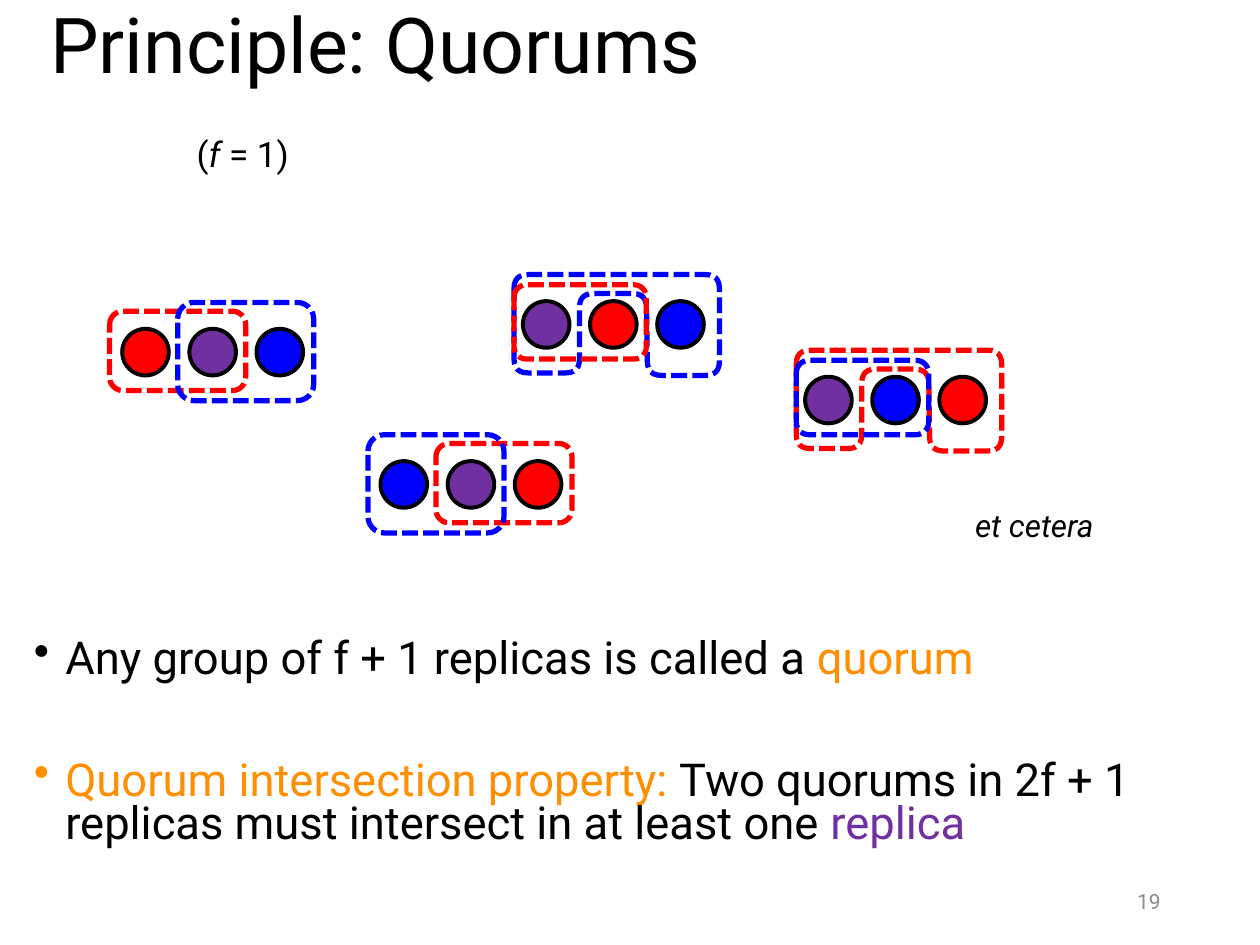
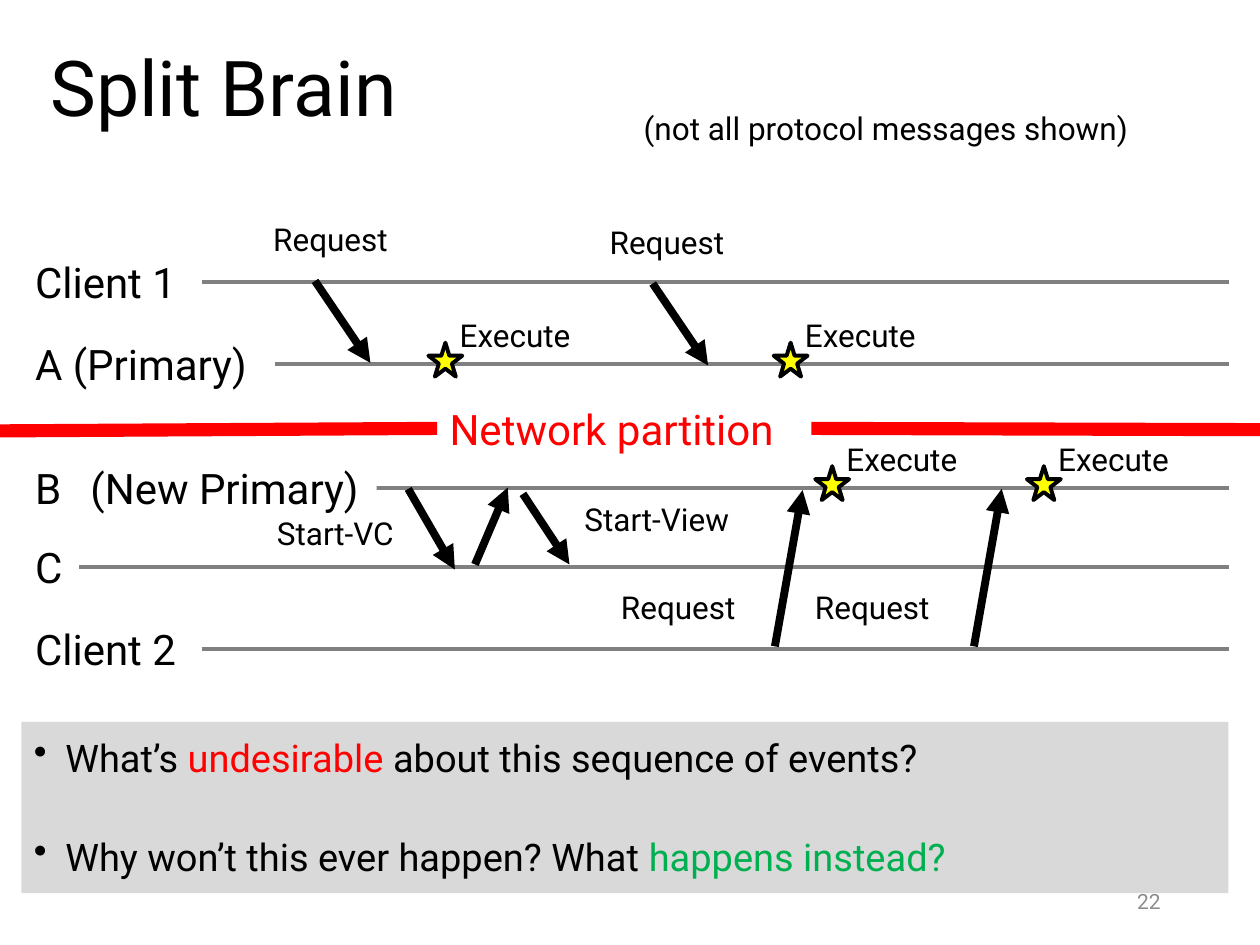
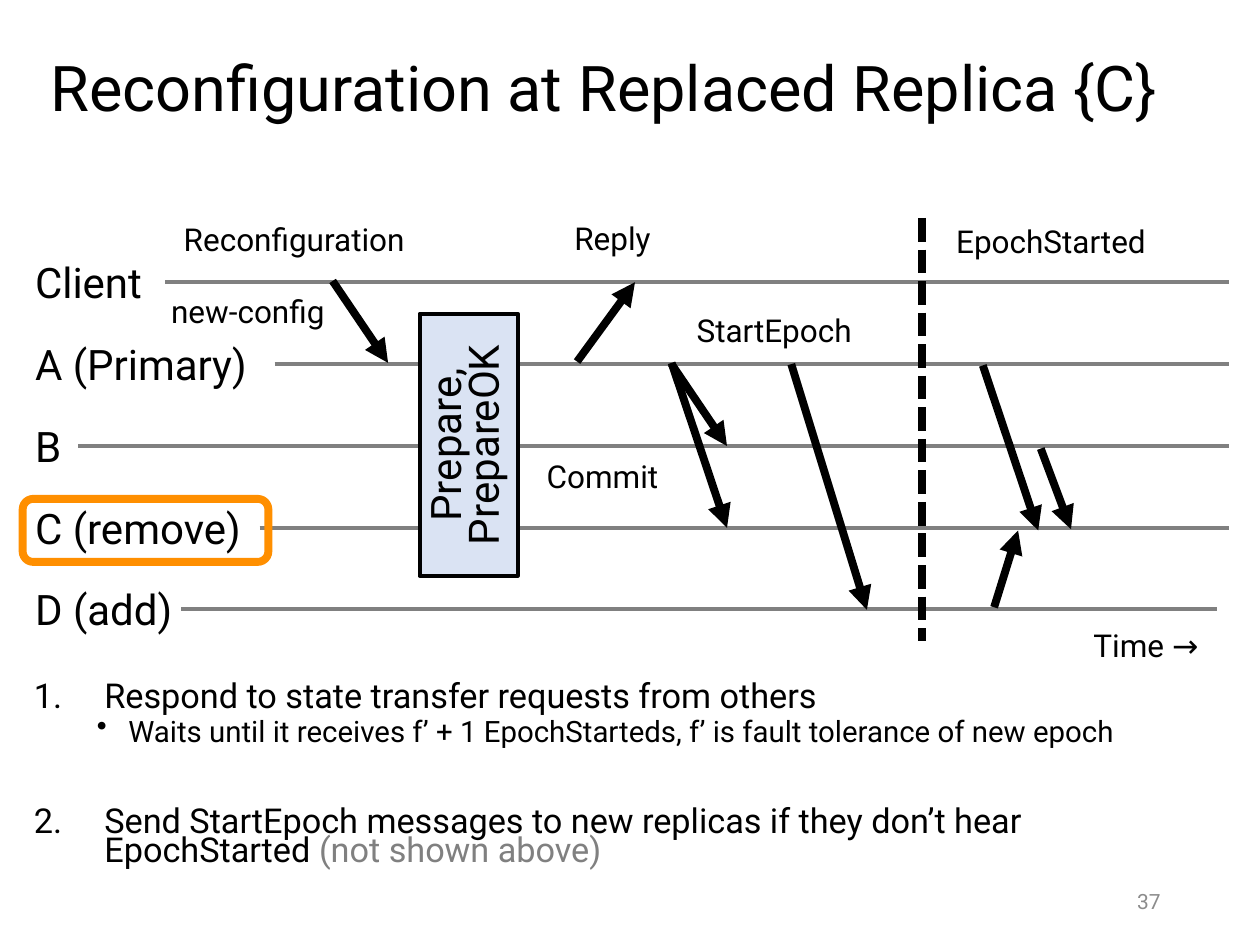
from dataclasses import dataclass
from math import hypot
from typing import Optional

from lxml.etree import SubElement
from pptx import Presentation
from pptx.dml.color import RGBColor
from pptx.enum.dml import MSO_LINE
from pptx.enum.shapes import MSO_CONNECTOR, MSO_SHAPE
from pptx.enum.text import MSO_ANCHOR, MSO_AUTO_SIZE, PP_ALIGN
from pptx.oxml.ns import qn
from pptx.shapes.autoshape import Shape
from pptx.shapes.connector import Connector
from pptx.slide import Slide
from pptx.util import Inches, Pt

WIDTH, HEIGHT = Inches(10), Inches(7.5)
COLUMNS, ROWS = 100, 75
FONT = "Roboto"
BLACK = RGBColor(0x00, 0x00, 0x00)
WHITE = RGBColor(0xFF, 0xFF, 0xFF)
RED = RGBColor(0xFF, 0x00, 0x00)
BLUE = RGBColor(0x00, 0x00, 0xFF)
PURPLE = RGBColor(0x70, 0x30, 0xA0)
ORANGE = RGBColor(0xFF, 0x8F, 0x00)
GREEN = RGBColor(0x00, 0xB0, 0x50)
YELLOW = RGBColor(0xFF, 0xFF, 0x00)
GREY = RGBColor(0x80, 0x80, 0x80)
NUMBER_GREY = RGBColor(0x8C, 0x8C, 0x8C)
PANEL_GREY = RGBColor(0xD9, 0xD9, 0xD9)
PALE_BLUE = RGBColor(0xDA, 0xE3, 0xF3)
LIFELINE_END = 97.5


@dataclass(frozen=True)
class Span:
    text: str
    color: RGBColor = BLACK


@dataclass(frozen=True)
class Point:
    spans: tuple[Span, ...]
    size: float
    before: float = 10
    margin: float = 0.25
    hang: float = 0.25
    numbered: bool = False


@dataclass(frozen=True)
class Label:
    text: str
    left: float
    top: float
    width: float


@dataclass(frozen=True)
class Lifeline:
    name: str
    row: float
    label_width: float
    gap: float = 0
    end: float = LIFELINE_END


@dataclass(frozen=True)
class Arrow:
    left: float
    top: float
    right: float
    bottom: float


@dataclass(frozen=True)
class Cluster:
    left: float
    top: float
    colors: tuple[RGBColor, RGBColor, RGBColor]


def across(columns: float) -> int:
    return round(WIDTH * columns / COLUMNS)


def down(rows: float) -> int:
    return round(HEIGHT * rows / ROWS)


def area(left: float, top: float, width: float, height: float) -> tuple[int, int, int, int]:
    return across(left), down(top), across(width), down(height)


def add_span(para, text: str, *, size: float, color: RGBColor = BLACK,
             italic: Optional[bool] = None) -> None:
    span = para.add_run()
    span.text = text
    span.font.name = FONT
    span.font.size = Pt(size)
    span.font.color.rgb = color
    span.font.italic = italic


def add_label(page: Slide, label: Label, *, size: float = 18, height: float = 4,
              color: RGBColor = BLACK, italic: Optional[bool] = None) -> Shape:
    box = page.shapes.add_textbox(*area(label.left, label.top, label.width, height))
    box.text_frame.word_wrap = False
    box.text_frame.auto_size = MSO_AUTO_SIZE.SHAPE_TO_FIT_TEXT
    add_span(box.text_frame.paragraphs[0], label.text, size=size, color=color, italic=italic)
    return box


def format_shape(shape: Shape, fill: Optional[RGBColor], line: Optional[RGBColor],
                 weight: float = 2.25, dashed: bool = False) -> None:
    shape.shadow.inherit = False
    if fill is None:
        shape.fill.background()
    else:
        shape.fill.solid()
        shape.fill.fore_color.rgb = fill
    if line is None:
        shape.line.fill.background()
        return
    shape.line.color.rgb = line
    shape.line.width = Pt(weight)
    if dashed:
        shape.line.dash_style = MSO_LINE.SQUARE_DOT


def add_outline(page: Slide, kind: MSO_SHAPE, left: float, top: float, width: float,
                height: float, *, fill: Optional[RGBColor] = None,
                line: Optional[RGBColor] = BLACK, weight: float = 2.25,
                dashed: bool = False) -> Shape:
    shape = page.shapes.add_shape(kind, *area(left, top, width, height))
    format_shape(shape, fill, line, weight, dashed)
    return shape


def add_line(page: Slide, left: float, top: float, right: float, bottom: float, *,
             color: RGBColor = BLACK, weight: float = 4.5, dashed: bool = False,
             arrow: bool = False) -> Connector:
    line = page.shapes.add_connector(MSO_CONNECTOR.STRAIGHT, across(left), down(top),
                                     across(right), down(bottom))
    line.line.color.rgb = color
    line.line.width = Pt(weight)
    if dashed:
        line.line.dash_style = MSO_LINE.SQUARE_DOT
    if arrow:
        SubElement(line.line._get_or_add_ln(), qn("a:tailEnd"), type="triangle")
    SubElement(line._element.spPr, qn("a:effectLst"))
    return line


def add_arrows(page: Slide, arrows: list[Arrow]) -> None:
    for arrow in arrows:
        add_line(page, arrow.left, arrow.top, arrow.right, arrow.bottom, arrow=True)


def add_lifelines(page: Slide, lifelines: list[Lifeline]) -> None:
    left = 1.8
    for lifeline in lifelines:
        box = add_label(page, Label(lifeline.name, left, lifeline.row - 2.5,
                                    lifeline.label_width), size=24, height=5)
        start = left + lifeline.label_width + lifeline.gap
        line = add_line(page, start, lifeline.row, lifeline.end, lifeline.row,
                        color=GREY, weight=2.25)
        if lifeline.gap == 0:
            line.begin_connect(box, 3)


def add_page(deck, title: str, number: int, *, size: float = 44, width: float = 94) -> Slide:
    page = deck.slides.add_slide(deck.slide_layouts[5])
    box = page.shapes.title
    box.left, box.top, box.width, box.height = area(3, 0, width, 14.5)
    frame = box.text_frame
    frame.word_wrap = True
    frame.auto_size = MSO_AUTO_SIZE.NONE
    frame.vertical_anchor = MSO_ANCHOR.MIDDLE
    para = frame.paragraphs[0]
    para.alignment = PP_ALIGN.LEFT
    para.line_spacing = 0.9
    add_span(para, title, size=size)

    box = page.shapes.add_textbox(*area(70.6, 69.5, 22.5, 4))
    box.text_frame.word_wrap = True
    box.text_frame.vertical_anchor = MSO_ANCHOR.MIDDLE
    para = box.text_frame.paragraphs[0]
    para.alignment = PP_ALIGN.RIGHT
    add_span(para, str(number), size=12, color=NUMBER_GREY)
    return page


def add_points(page: Slide, points: list[Point], *, top: float, height: float,
               spacing: float, fill: Optional[RGBColor] = None) -> Shape:
    box = page.shapes.add_textbox(*area(1.7, top, 95.8, height))
    if fill is not None:
        box.fill.solid()
        box.fill.fore_color.rgb = fill
    frame = box.text_frame
    frame.word_wrap = True
    for index, point in enumerate(points):
        para = frame.add_paragraph() if index else frame.paragraphs[0]
        para.line_spacing = spacing
        para.space_before = Pt(point.before)
        properties = para._p.get_or_add_pPr()
        properties.set("marL", str(Inches(point.margin)))
        properties.set("indent", str(-Inches(point.hang)))
        if point.numbered:
            SubElement(properties, qn("a:buAutoNum"), type="arabicPeriod")
        else:
            SubElement(properties, qn("a:buChar"), char="•")
        for span in point.spans:
            add_span(para, span.text, size=point.size, color=span.color)
    return box


def rounded(corners: list[tuple[float, float]], radius: float) -> list[tuple[float, float]]:
    steps = 6
    outline = []
    for index, (x, y) in enumerate(corners):
        ends = []
        for near_x, near_y in (corners[index - 1], corners[(index + 1) % len(corners)]):
            share = radius / hypot(near_x - x, near_y - y)
            ends.append((x + (near_x - x) * share, y + (near_y - y) * share))
        (start_x, start_y), (end_x, end_y) = ends
        for step in range(steps + 1):
            t = step / steps
            a, b, c = (1 - t) ** 2, 2 * t * (1 - t), t ** 2
            outline.append((a * start_x + b * x + c * end_x, a * start_y + b * y + c * end_y))
    return outline


def add_replicas(page: Slide, cluster: Cluster) -> None:
    for index, color in enumerate(cluster.colors):
        add_outline(page, MSO_SHAPE.OVAL, cluster.left + 5.33 * index, cluster.top,
                    3.7, 3.7, fill=color)


def add_quorum(page: Slide, left: float, top: float, width: float, height: float,
               color: RGBColor) -> None:
    add_outline(page, MSO_SHAPE.ROUNDED_RECTANGLE, left, top, width, height,
                line=color, weight=3, dashed=True)


def add_adjacent_quorums(page: Slide, cluster: Cluster) -> None:
    add_replicas(page, cluster)
    for color, rise, height in ((RED, 1.4, 6.3), (BLUE, 2.1, 7.8)):
        shift = -1 if cluster.colors[0] == color else 4.4
        add_quorum(page, cluster.left + shift, cluster.top - rise, 10.8, height, color)


def add_notched_quorums(page: Slide, cluster: Cluster) -> None:
    add_replicas(page, cluster)
    inner, outer = cluster.colors[1:]
    corners = [(-0.7, -2.1), (15.6, -2.1), (15.6, 5.9), (9.9, 5.9),
               (9.8, -0.6), (4.5, -0.6), (4.5, 5.7), (-0.7, 5.7)]
    outline = [(across(cluster.left + x), down(cluster.top + y))
               for x, y in rounded(corners, 1.1)]
    builder = page.shapes.build_freeform(*outline[0])
    builder.add_line_segments(outline[1:], close=True)
    format_shape(builder.convert_to_shape(), None, outer, 3, True)
    add_quorum(page, cluster.left - 0.7, cluster.top - 1.3, 10.5, 5.9, inner)


def add_execution(page: Slide, left: float, top: float) -> None:
    add_label(page, Label("Execute", left + 1.5, top - 2.6, 11.7))
    add_outline(page, MSO_SHAPE.STAR_5_POINT, left, top, 2.7, 2.7, fill=YELLOW)


def build_quorums(deck) -> None:
    page = add_page(deck, "Principle: Quorums", 19)
    para = page.shapes.title.text_frame.add_paragraph()
    para.alignment = PP_ALIGN.LEFT
    para.line_spacing = 0.9
    para.space_before = Pt(27)
    para._p.get_or_add_pPr().set("marL", str(across(11.6)))
    para._p.get_or_add_pPr().set("indent", "0")
    add_span(para, "(", size=20)
    add_span(para, "f", size=20, italic=True)
    add_span(para, " = 1)", size=20)
    add_points(page, [
        Point((Span("Any group of f + 1 replicas is called a "), Span("quorum", ORANGE)), 25.9),
        Point((Span("Quorum intersection property: ", ORANGE),
               Span("Two quorums in 2f + 1 replicas must intersect in at least one"),
               Span(" replica", PURPLE)), 25.9, before=44.5),
    ], top=50.3, height=18.9, spacing=0.8)
    add_adjacent_quorums(page, Cluster(9.7, 26.1, (RED, PURPLE, BLUE)))
    add_notched_quorums(page, Cluster(41.5, 23.9, (PURPLE, RED, BLUE)))
    add_adjacent_quorums(page, Cluster(30.2, 36.6, (BLUE, PURPLE, RED)))
    add_notched_quorums(page, Cluster(63.9, 29.9, (PURPLE, BLUE, RED)))
    add_label(page, Label("et cetera", 76.4, 39.7, 12.3), italic=True)


def build_split_brain(deck) -> None:
    page = add_page(deck, "Split Brain", 22)
    panel = add_points(page, [
        Point((Span("What’s "), Span("undesirable ", RED),
               Span("about this sequence of events?")), 21.7),
        Point((Span("Why won’t this ever happen? What "),
               Span("happens instead?", GREEN)), 21.7, before=38.5),
    ], top=57.3, height=13.6, spacing=0.7, fill=PANEL_GREY)
    panel.text_frame.margin_top = down(2)
    panel.text_frame.margin_bottom = down(1)
    add_lifelines(page, [
        Lifeline("Client 1", 22.4, 14.2),
        Lifeline("A (Primary)", 28.9, 19, gap=1),
        Lifeline("B", 38.7, 4.5),
        Lifeline("C", 45, 4.5),
        Lifeline("Client 2", 51.5, 14.2),
    ])
    partition = add_label(page, Label("Network partition", 34.7, 31.5, 29.7),
                          size=24, height=5, color=RED)
    add_line(page, 64.4, 34, COLUMNS, 34.1, color=RED, weight=7.5).begin_connect(partition, 3)
    add_line(page, 0, 34.2, 34.7, 34, color=RED, weight=7.5).end_connect(partition, 1)
    add_arrows(page, [
        Arrow(32.4, 38.8, 36.1, 45.2),
        Arrow(37.7, 44.8, 40.3, 38.7),
        Arrow(41.5, 39.2, 45.2, 44.8),
        Arrow(25, 22.3, 29.4, 28.8),
        Arrow(51.8, 22.5, 56.2, 29),
        Arrow(61.5, 51.3, 63.7, 38.9),
        Arrow(77.3, 51.3, 79.5, 38.8),
    ])
    for left, top in ((34, 27.2), (61.4, 27.2), (64.7, 37), (81.5, 37)):
        add_execution(page, left, top)
    for left, top in ((20.7, 17), (47.4, 17.2), (48.3, 46.2), (63.7, 46.2)):
        add_label(page, Label("Request", left, top, 11.7))
    for label in (Label("Start-View", 45.4, 39.2, 14.2),
                  Label("Start-VC", 21, 40.3, 12),
                  Label("(not all protocol messages shown)", 50.1, 8.2, 41.9)):
        add_label(page, label)
    primary = add_label(page, Label("(New Primary)", 6.2, 36.2, 23.7), size=24, height=5)
    primary.fill.solid()
    primary.fill.fore_color.rgb = WHITE


def build_reconfiguration(deck) -> None:
    page = add_page(deck, "Reconfiguration at Replaced Replica {C}", 37, size=36, width=97)
    add_points(page, [
        Point((Span("Respond to state transfer requests from others"),), 19.6,
              margin=0.56, hang=0.56, numbered=True),
        Point((Span("Waits until it receives f’ + 1 EpochStarteds, "
                    "f’ is fault tolerance of new epoch"),), 16.8, before=5, margin=0.75),
        Point((Span("Send StartEpoch messages to new replicas if they don’t hear EpochStarted"),
               Span(" (not shown above)", GREY)), 19.6, before=36,
              margin=0.56, hang=0.56, numbered=True),
    ], top=53.9, height=16.9, spacing=0.7)
    page.shapes[-1].text_frame.paragraphs[1].level = 1
    add_lifelines(page, [
        Lifeline("Client", 22.4, 11, gap=0.3),
        Lifeline("A (Primary)", 28.9, 19, gap=1),
        Lifeline("B", 35.4, 4.4),
        Lifeline("C (remove)", 41.9, 18.8),
        Lifeline("D (add)", 48.3, 13.2, gap=-0.6, end=96.6),
    ])
    phase = add_outline(page, MSO_SHAPE.RECTANGLE, 33.3, 24.9, 7.8, 20.8, fill=PALE_BLUE)
    frame = phase.text_frame
    frame.word_wrap = True
    frame.vertical_anchor = MSO_ANCHOR.MIDDLE
    frame._txBody.bodyPr.set("vert", "vert270")
    para = frame.paragraphs[0]
    para.alignment = PP_ALIGN.CENTER
    para.line_spacing = 0.75
    add_span(para, "Prepare, PrepareOK", size=24)
    add_arrows(page, [
        Arrow(26.4, 22.3, 30.8, 28.8),
        Arrow(45.8, 28.7, 50.4, 22.4),
        Arrow(53.3, 28.9, 57.7, 35.4),
        Arrow(53.3, 28.8, 57.7, 41.9),
        Arrow(62.8, 28.9, 68.8, 48.4),
        Arrow(78.9, 48.2, 80.8, 42.1),
        Arrow(78, 29, 82.4, 42.1),
        Arrow(82.6, 35.6, 85, 42),
    ])
    add_line(page, 73.2, 17.3, 73.2, 50.9, dashed=True)
    for label in (Label("Time →", 85.8, 49.2, 10.9),
                  Label("Reconfiguration", 13.6, 17, 20.6),
                  Label("new-config", 12.6, 22.7, 15.1),
                  Label("Reply", 44.6, 16.9, 8.7),
                  Label("EpochStarted", 74.9, 17.1, 18.1),
                  Label("Commit", 42.4, 35.8, 11.2),
                  Label("StartEpoch", 54.3, 24.2, 15.1)):
        add_label(page, label)
    add_outline(page, MSO_SHAPE.ROUNDED_RECTANGLE, 1.8, 39.6, 19.5, 5,
                line=ORANGE, weight=4.5)


def main() -> None:
    deck = Presentation()
    deck.slide_width, deck.slide_height = WIDTH, HEIGHT
    build_quorums(deck)
    build_split_brain(deck)
    build_reconfiguration(deck)
    deck.save("out.pptx")


if __name__ == "__main__":
    main()
